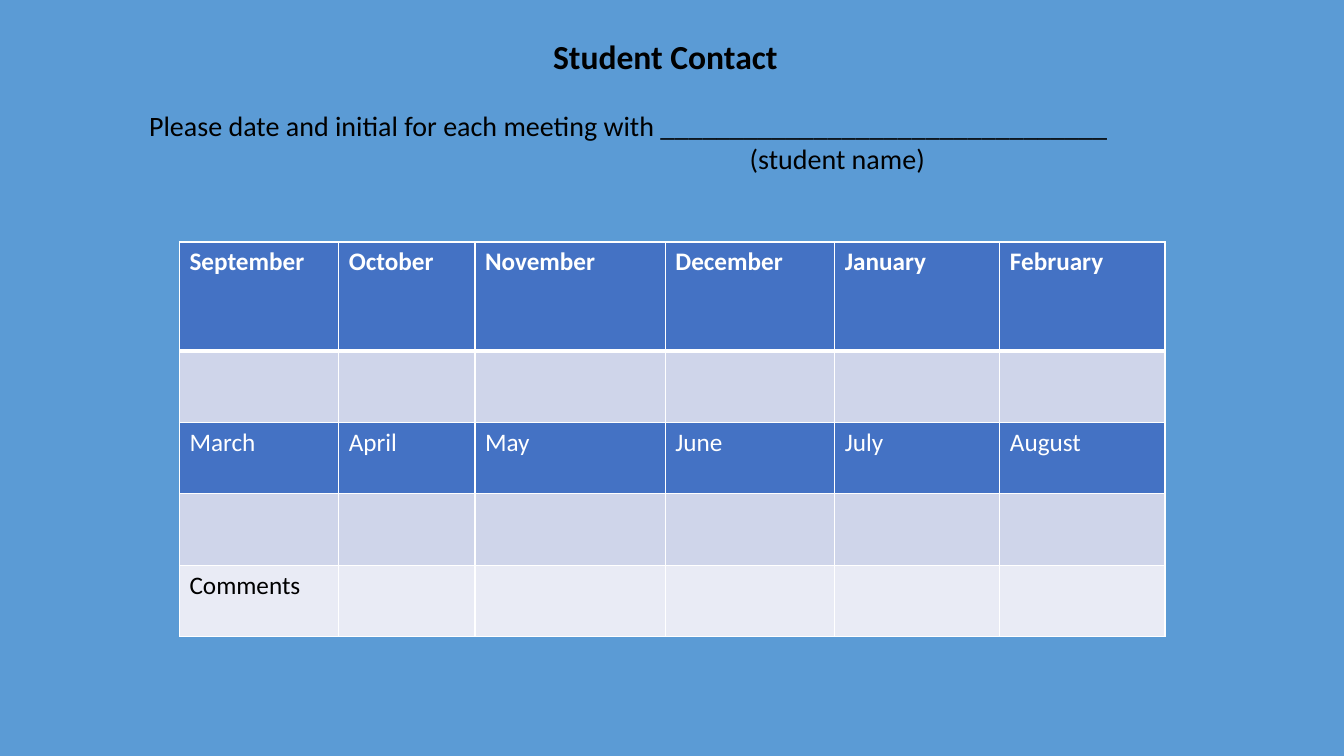
from lxml import etree
from pptx import Presentation
from pptx.dml.color import RGBColor
from pptx.enum.text import MSO_ANCHOR, MSO_AUTO_SIZE, PP_ALIGN
from pptx.oxml.ns import qn
from pptx.util import Pt

TOP = MSO_ANCHOR.TOP
FIXED = MSO_AUTO_SIZE.NONE
LEFT, CENTER = PP_ALIGN.LEFT, PP_ALIGN.CENTER

BLACK, WHITE = "000000", "FFFFFF"
SKY, BLUE, PALE, PALEST = "5B9BD5", "4472C4", "CFD5EA", "E9EBF5"

COLUMN_WIDTHS = [113.8, 97.3, 136, 121, 118, 118]
MONTH_ROWS = [
    (78, BLUE, WHITE, True,
     ["September", "October", "November", "December", "January", "February"]),
    (51, PALE, BLACK, False, []),
    (51, BLUE, WHITE, False, ["March", "April", "May", "June", "July", "August"]),
    (51, PALE, BLACK, False, []),
    (51, PALEST, BLACK, False, ["Comments"]),
]


def color(value):
    return RGBColor.from_string(value)


def write(para, text, size=18, ink=BLACK, bold=False, align=LEFT, indent=0):
    para.alignment = align
    if indent:
        properties = para._p.get_or_add_pPr()
        properties.set("marL", str(Pt(indent)))
        properties.set("indent", "0")
    span = para.add_run()
    span.text = text
    span.font.name = "Calibri"
    span.font.size = Pt(size)
    span.font.bold = bold
    span.font.color.rgb = color(ink)


class ContactPage:
    """Builds one contact sheet page, with all lengths in points."""

    def __init__(self, deck, background):
        self.page = deck.slides.add_slide(deck.slide_layouts[5])
        self.page.background.fill.solid()
        self.page.background.fill.fore_color.rgb = color(background)

    def place(self, box, left, top, width, height):
        box.left, box.top, box.width, box.height = map(Pt, (left, top, width, height))
        frame = box.text_frame
        frame.word_wrap = True
        frame.auto_size = FIXED
        frame.vertical_anchor = TOP
        return frame

    def title(self, text, *bounds):
        frame = self.place(self.page.shapes.title, *bounds)
        write(frame.paragraphs[0], text, size=24, bold=True, align=CENTER)

    def text(self, lines, *bounds):
        frame = self.place(self.page.shapes.add_textbox(0, 0, 0, 0), *bounds)
        for index, (line, indent) in enumerate(lines):
            para = frame.add_paragraph() if index else frame.paragraphs[0]
            write(para, line, size=20, indent=indent)

    def border(self, cell, side, width):
        properties = cell._tc.get_or_add_tcPr()
        line = etree.SubElement(properties, qn(f"a:ln{side}"), w=str(Pt(width)))
        fill = etree.SubElement(line, qn("a:solidFill"))
        etree.SubElement(fill, qn("a:srgbClr"), val=WHITE)

    def table(self, left, top, widths, rows):
        height = sum(row[0] for row in rows)
        frame = self.page.shapes.add_table(
            len(rows), len(widths), Pt(left), Pt(top), Pt(sum(widths)), Pt(height))
        table = frame.table
        for column, width in zip(table.columns, widths):
            column.width = Pt(width)
        for index, (height, fill, ink, bold, labels) in enumerate(rows):
            table.rows[index].height = Pt(height)
            for cell in table.rows[index].cells:
                for side in "LRTB":
                    under_header = (index, side) in ((0, "B"), (1, "T"))
                    self.border(cell, side, 3 if under_header else 1)
                cell.fill.solid()
                cell.fill.fore_color.rgb = color(fill)
            for cell, label in zip(table.rows[index].cells, labels):
                write(cell.text_frame.paragraphs[0], label, ink=ink, bold=bold)


def main():
    deck = Presentation()
    deck.slide_width, deck.slide_height = Pt(960), Pt(540)
    sheet = ContactPage(deck, SKY)
    sheet.title("Student Contact", 99.4, 22.3, 751.7, 37)
    sheet.text([
        ("Please date and initial for each meeting with " + "_" * 32, 0),
        ("(student name)", 429),
    ], 99.4, 73.6, 751.7, 60)
    sheet.table(128.2, 172.8, COLUMN_WIDTHS, MONTH_ROWS)
    deck.save("out.pptx")


if __name__ == "__main__":
    main()
